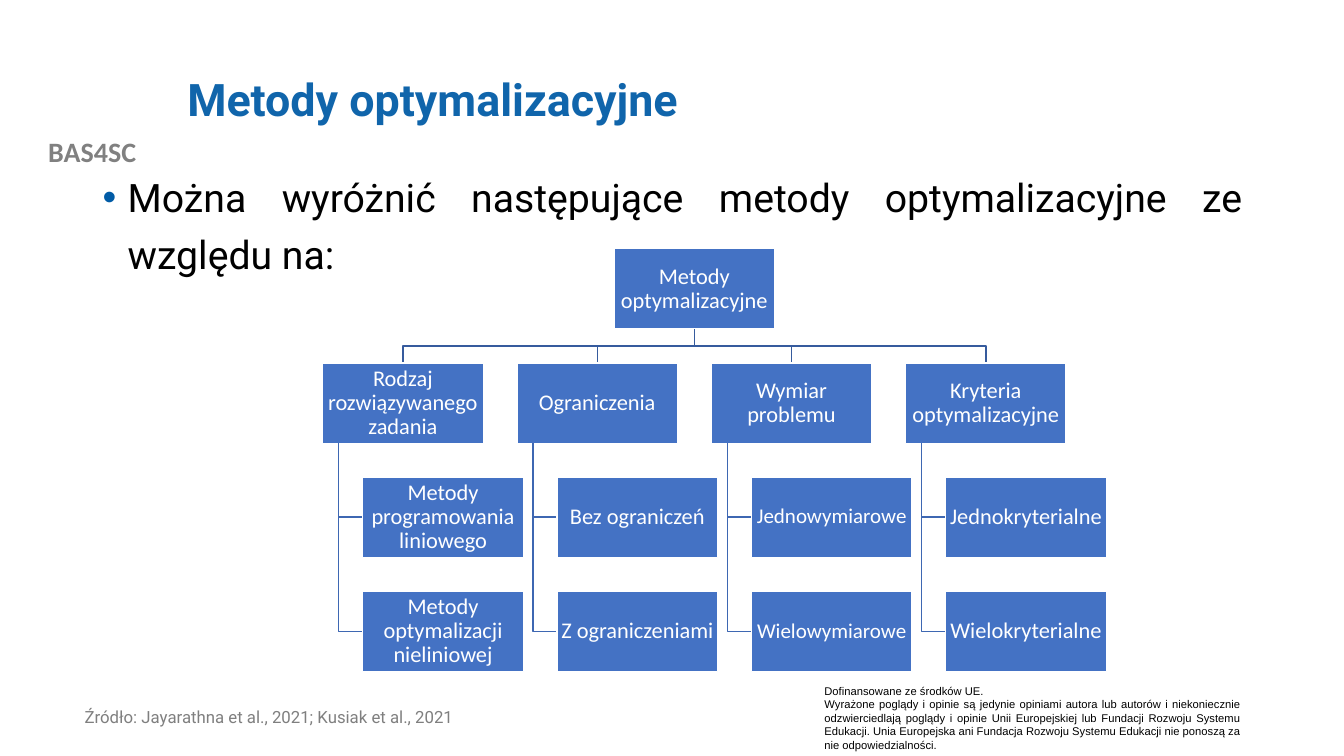
from lxml import etree
from pptx import Presentation
from pptx.dml.color import RGBColor
from pptx.enum.shapes import MSO_SHAPE
from pptx.enum.text import MSO_ANCHOR, PP_ALIGN
from pptx.oxml.ns import qn
from pptx.util import Pt

RECTANGLE = MSO_SHAPE.RECTANGLE
TOP, MIDDLE = MSO_ANCHOR.TOP, MSO_ANCHOR.MIDDLE
LEFT, CENTER, JUSTIFY = PP_ALIGN.LEFT, PP_ALIGN.CENTER, PP_ALIGN.JUSTIFY

WHITE = RGBColor(0xFF, 0xFF, 0xFF)
BLACK = RGBColor(0, 0, 0)
GREY = RGBColor(0x80, 0x80, 0x80)
SOURCE_GREY = RGBColor(0x7F, 0x7F, 0x7F)
TITLE_BLUE = RGBColor(0x10, 0x65, 0xAB)
BULLET_BLUE = RGBColor(0x01, 0x5B, 0xA6)
BOX_BLUE = RGBColor(0x44, 0x72, 0xC4)
BUS_BLUE = RGBColor(0x36, 0x5B, 0x9D)
BRANCH_BLUE = RGBColor(0x3E, 0x67, 0xB2)

PROJECT = "BAS4SC"
TITLE = "Metody optymalizacyjne"
INTRO = "Można wyróżnić następujące metody optymalizacyjne ze względu na:"
SOURCE = "Źródło: Jayarathna et al., 2021; Kusiak et al., 2021"
FUNDING = [
    "Dofinansowane ze środków UE.",
    "Wyrażone poglądy i opinie są jedynie opiniami autora lub autorów i "
    "niekoniecznie odzwierciedlają poglądy i opinie Unii Europejskiej lub "
    "Fundacji Rozwoju Systemu Edukacji. Unia Europejska ani Fundacja Rozwoju "
    "Systemu Edukacji nie ponoszą za nie odpowiedzialności.",
]
ROOT = "Metody optymalizacyjne"
BRANCHES = [
    ("Rodzaj rozwiązywanego zadania", 16,
     ["Metody programowania liniowego", "Metody optymalizacji nieliniowej"]),
    ("Ograniczenia", 16, ["Bez ograniczeń", "Z ograniczeniami"]),
    ("Wymiar problemu", 15, ["Jednowymiarowe", "Wielowymiarowe"]),
    ("Kryteria optymalizacyjne", 16, ["Jednokryterialne", "Wielokryterialne"]),
]

BOX_WIDTH, BOX_HEIGHT = 114.8, 57.4
TREE_LEFT, TREE_TOP = 230.4, 177.7
COLUMN_STEP, ROW_STEP = 138.8, 81.5
LEAF_INDENT, TRUNK_INDENT = 28.7, 11.5

deck = Presentation()
deck.slide_width, deck.slide_height = Pt(960), Pt(540)
page = deck.slides.add_slide(deck.slide_layouts[6])


def write(frame, lines, size, font, color, align=LEFT, bold=False, spacing=1.0):
    frame.word_wrap = True
    frame.text = "\n".join(lines)
    for para in frame.paragraphs:
        para.alignment = align
        para.line_spacing = spacing
        for span in para.runs:
            span.font.size = Pt(size)
            span.font.name = font
            span.font.bold = bold
            span.font.color.rgb = color


def add_text(place, lines, size, font, color, anchor=TOP, **style):
    box = page.shapes.add_textbox(*map(Pt, place))
    box.text_frame.vertical_anchor = anchor
    write(box.text_frame, lines, size, font, color, **style)
    return box.text_frame


def add_bullet(para, color):
    props = para._p.get_or_add_pPr()
    props.set("marL", str(Pt(18)))
    props.set("indent", str(-Pt(18)))
    tint = etree.SubElement(props, qn("a:buClr"))
    etree.SubElement(tint, qn("a:srgbClr")).set("val", str(color))
    etree.SubElement(props, qn("a:buFont")).set("typeface", "Arial")
    etree.SubElement(props, qn("a:buChar")).set("char", "•")


def add_path(points, color):
    start, *rest = [(Pt(x), Pt(y)) for x, y in points]
    builder = page.shapes.build_freeform(*start, scale=1.0)
    builder.add_line_segments(rest, close=False)
    line = builder.convert_to_shape()
    line.shadow.inherit = False
    line.fill.background()
    line.line.color.rgb = color
    line.line.width = Pt(1)


def add_box(left, top, label, size=16):
    box = page.shapes.add_shape(
        RECTANGLE, Pt(left), Pt(top), Pt(BOX_WIDTH), Pt(BOX_HEIGHT))
    box.shadow.inherit = False
    box.fill.solid()
    box.fill.fore_color.rgb = BOX_BLUE
    box.line.color.rgb = WHITE
    box.line.width = Pt(1)
    frame = box.text_frame
    frame.margin_left = frame.margin_right = Pt(0.8)
    frame.margin_top = frame.margin_bottom = Pt(0.8)
    frame.vertical_anchor = MIDDLE
    write(frame, [label], size, "Calibri", WHITE, align=CENTER, spacing=0.9)


add_text((0, 92.2, 131.8, 31.7), [PROJECT], 20, "Calibri", GREY,
         align=CENTER, bold=True)
funding = add_text((581.8, 485.3, 311.8, 55.4), FUNDING, 8, "Arial", BLACK,
                   align=JUSTIFY)
add_text((126.7, 28.8, 767.5, 87.8), [TITLE], 32, "Roboto", TITLE_BLUE,
         anchor=MIDDLE, bold=True, spacing=0.9)
intro = add_text((66.2, 113.8, 828, 87.8), [INTRO], 28, "Roboto", BLACK,
                 align=JUSTIFY, spacing=1.2)
add_bullet(intro.paragraphs[0], BULLET_BLUE)
add_text((53.3, 502.6, 360.7, 37.4), [SOURCE], 12, "Roboto", SOURCE_GREY,
         spacing=0.9)

root_left = TREE_LEFT + COLUMN_STEP * (len(BRANCHES) - 1) / 2
root_center = root_left + BOX_WIDTH / 2
root_bottom = TREE_TOP + BOX_HEIGHT
branch_top = TREE_TOP + ROW_STEP
branch_bottom = branch_top + BOX_HEIGHT
bus = (root_bottom + branch_top) / 2

add_box(root_left, TREE_TOP, ROOT)
for column, (branch, leaf_size, leaves) in enumerate(BRANCHES):
    left = TREE_LEFT + column * COLUMN_STEP
    center = left + BOX_WIDTH / 2
    trunk = left + TRUNK_INDENT
    leaf_left = left + LEAF_INDENT
    add_path([(root_center, root_bottom), (root_center, bus),
              (center, bus), (center, branch_top)], BUS_BLUE)
    add_box(left, branch_top, branch)
    for row, leaf in enumerate(leaves, start=1):
        leaf_top = branch_top + row * ROW_STEP
        leaf_middle = leaf_top + BOX_HEIGHT / 2
        add_path([(trunk, branch_bottom), (trunk, leaf_middle),
                  (leaf_left, leaf_middle)], BRANCH_BLUE)
        add_box(leaf_left, leaf_top, leaf, leaf_size)

deck.save("out.pptx")
